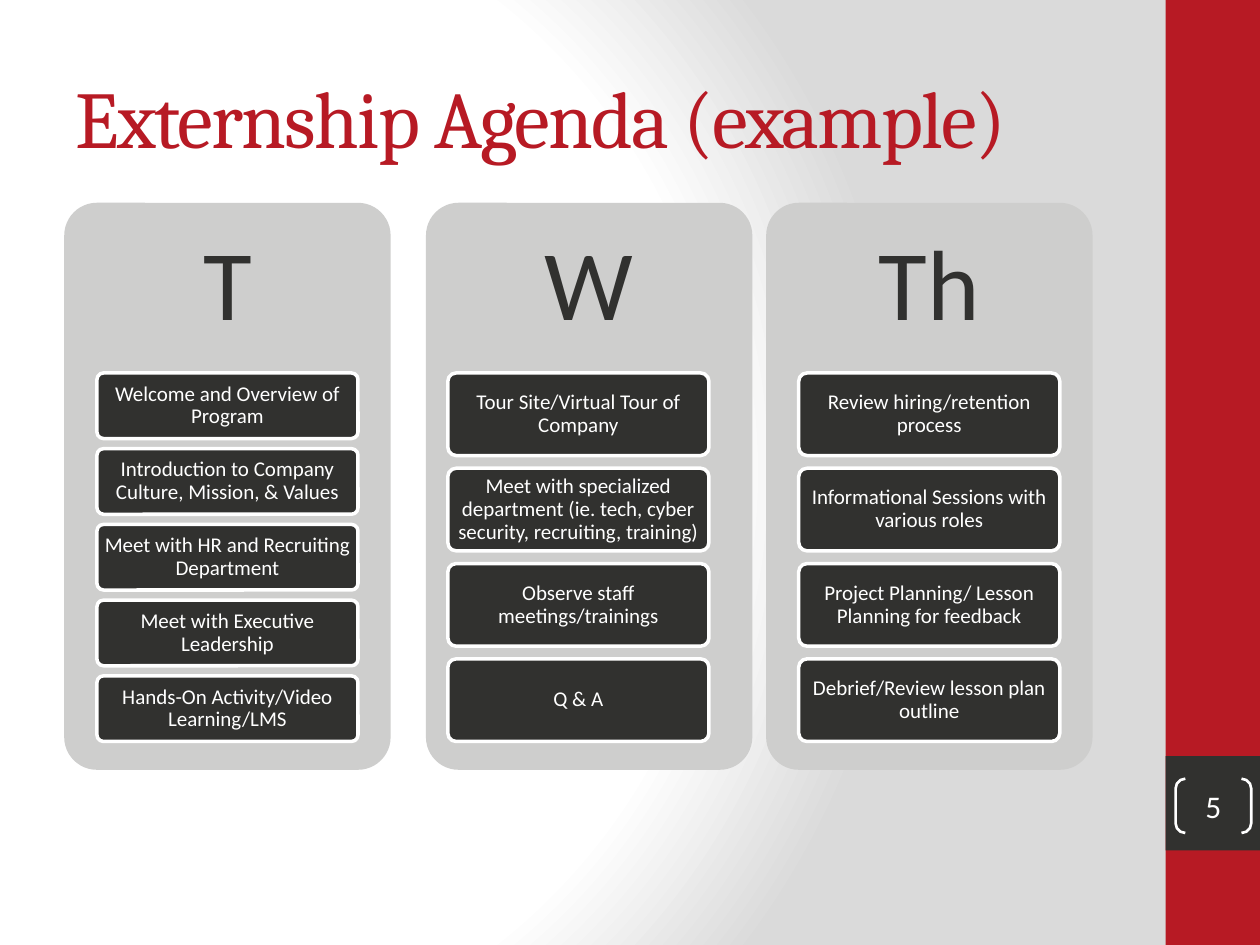
from pptx import Presentation
from pptx.dml.color import RGBColor
from pptx.enum.shapes import MSO_SHAPE as Kind
from pptx.enum.text import MSO_ANCHOR as Anchor, PP_ALIGN as Align
from pptx.oxml import parse_xml
from pptx.util import Pt

RED = RGBColor(0xB7, 0x1A, 0x24)
DARK = RGBColor(0x31, 0x31, 0x2F)
GREY = RGBColor(0xCE, 0xCE, 0xCD)
WHITE = RGBColor(0xFF, 0xFF, 0xFF)

BACK = """<p:bg xmlns:p="http://schemas.openxmlformats.org/presentationml/2006/main"
 xmlns:a="http://schemas.openxmlformats.org/drawingml/2006/main"><p:bgPr>
<a:gradFill rotWithShape="1"><a:gsLst>
<a:gs pos="0"><a:srgbClr val="FFFFFF"/></a:gs>
<a:gs pos="75000"><a:srgbClr val="FFFFFF"/></a:gs>
<a:gs pos="100000"><a:srgbClr val="DADADA"/></a:gs>
</a:gsLst><a:path path="circle"><a:fillToRect l="20000" t="50000" r="100000" b="50000"/></a:path>
</a:gradFill><a:effectLst/></p:bgPr></p:bg>"""

DAYS = [
    ("T", 36.7, [
        "Welcome and Overview of Program",
        "Introduction to Company Culture, Mission, & Values",
        "Meet with HR and Recruiting Department",
        "Meet with Executive Leadership",
        "Hands-On Activity/Video Learning/LMS",
    ]),
    ("W", 243.4, [
        "Tour Site/Virtual Tour of Company",
        "Meet with specialized department (ie. tech, cyber security, recruiting, training)",
        "Observe staff meetings/trainings",
        "Q & A",
    ]),
    ("Th", 437.8, [
        "Review hiring/retention process",
        "Informational Sessions with various roles",
        "Project Planning/ Lesson Planning for feedback",
        "Debrief/Review lesson plan outline",
    ]),
]


def draw(kind, x, y, w, h, fill=None, line=0, adj=None):
    shape = slide.shapes.add_shape(kind, Pt(x), Pt(y), Pt(w), Pt(h))
    shape.shadow.inherit = False
    if fill is None:
        shape.fill.background()
    else:
        shape.fill.solid()
        shape.fill.fore_color.rgb = fill
    if line:
        shape.line.color.rgb = WHITE
        shape.line.width = Pt(line)
    else:
        shape.line.fill.background()
    if adj:
        shape.adjustments[0] = adj
    return shape


def write(shape, text, size, color, side, top, font="Calibri", align=Align.CENTER, lead=0.9):
    frame = shape.text_frame
    frame.word_wrap = True
    frame.vertical_anchor = Anchor.MIDDLE
    frame.margin_left = frame.margin_right = Pt(side)
    frame.margin_top = frame.margin_bottom = Pt(top)
    para = frame.paragraphs[0]
    para.alignment = align
    para.line_spacing = lead
    run = para.add_run()
    run.text = text
    run.font.name = font
    run.font.size = Pt(size)
    run.font.color.rgb = color
    return run


deck = Presentation()
deck.slide_width, deck.slide_height = Pt(720), Pt(540)
slide = deck.slides.add_slide(deck.slide_layouts[6])
slide.element.cSld.insert(0, parse_xml(BACK))

draw(Kind.RECTANGLE, 666, 0, 54, 540, RED)
draw(Kind.RECTANGLE, 666, 432, 54, 54, DARK)
title = slide.shapes.add_textbox(Pt(36), Pt(21.6), Pt(600), Pt(90))
run = write(title, "Externship Agenda (example)", 46, RED, 7.2, 3.6, "Cambria", Align.LEFT, 1.0)
run.font._element.set("spc", "-100")
page = draw(Kind.DOUBLE_BRACKET, 671.8, 445, 43.2, 31, line=1.5, adj=0.179)
write(page, "5", 18, WHITE, 0, 0, lead=1.0)

GAP = 0.154
for col, (day, left, items) in enumerate(DAYS):
    draw(Kind.ROUNDED_RECTANGLE, left, 115.9, 186.5, 324, GREY, adj=0.1)
    head = slide.shapes.add_textbox(Pt(left), Pt(115.9), Pt(186.5), Pt(97.2))
    write(head, day, 57, DARK, 17.1, 17.1)
    tall = 210.6 / (len(items) + GAP * (len(items) - 1))
    for row, item in enumerate(items):
        top = 213.1 + row * tall * (1 + GAP)
        cell = draw(Kind.ROUNDED_RECTANGLE, 55.4 + 200.5 * col, top, 149.2, tall, DARK, 2, 0.1)
        write(cell, item, 12, WHITE, 2.4, 1.8)

deck.save("out.pptx")
